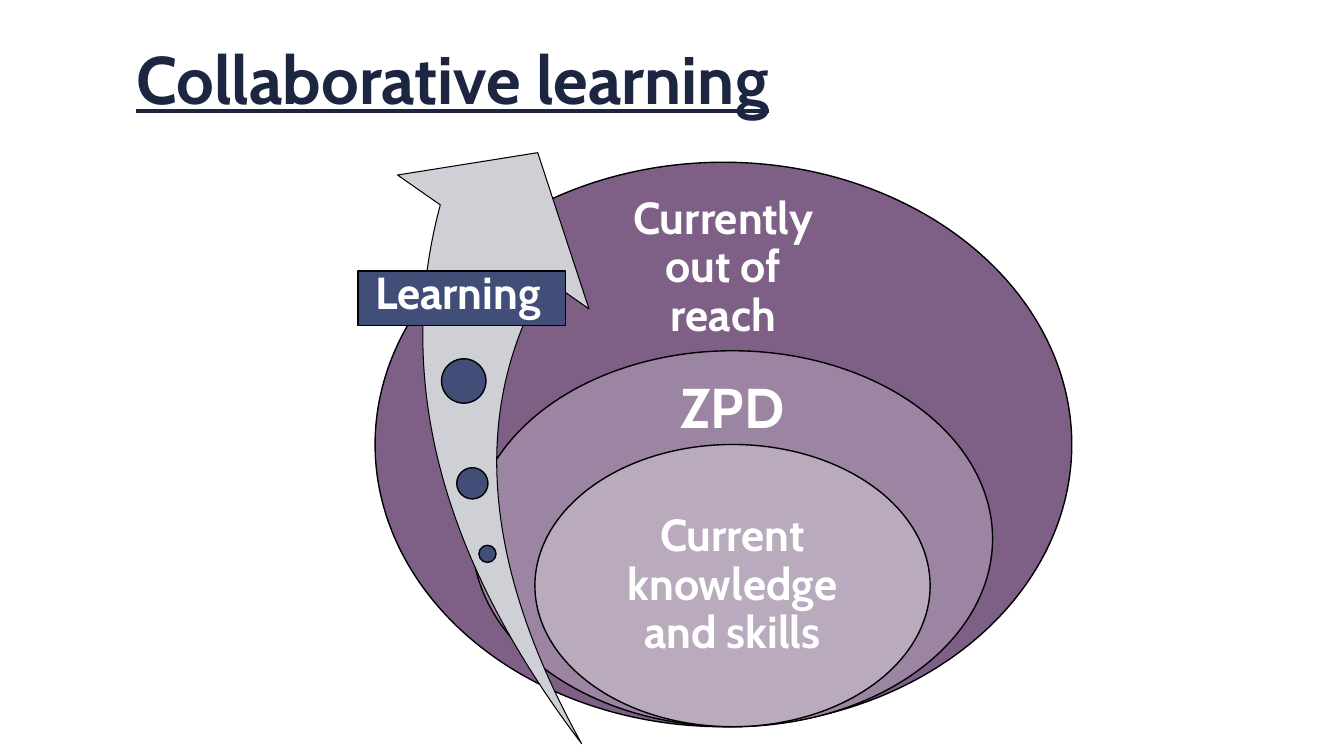
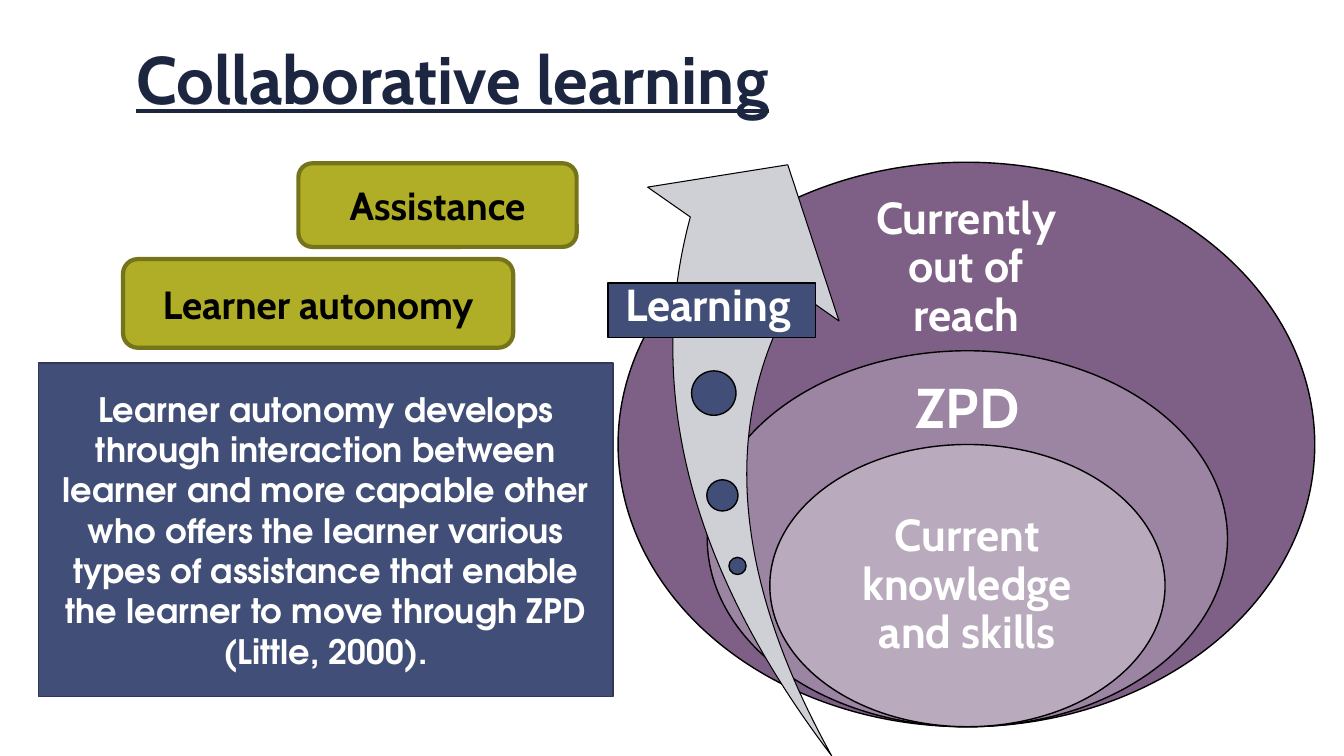
"""Build two slides on collaborative learning and the zone of proximal development."""
from pptx import Presentation
from pptx.dml.color import RGBColor
from pptx.enum import shapes, text
from pptx.util import Inches, Pt

NAVY = RGBColor(0x1C, 0x26, 0x40)
BLUE = RGBColor(0x41, 0x4E, 0x77)
BLUE_EDGE = RGBColor(0x30, 0x3A, 0x58)
PURPLE = RGBColor(0x7E, 0x60, 0x86)
MAUVE = RGBColor(0x9C, 0x84, 0xA3)
LILAC = RGBColor(0xB9, 0xAB, 0xBD)
GREY = RGBColor(0xCF, 0xD0, 0xD6)
OLIVE = RGBColor(0xB0, 0xAD, 0x26)
OLIVE_EDGE = RGBColor(0x75, 0x74, 0x1A)
BLACK = RGBColor(0, 0, 0)
WHITE = RGBColor(0xFF, 0xFF, 0xFF)

HEAD_FONT = "Cabin"
BODY_FONT = "TeX Gyre Adventor"
SHAPE = shapes.MSO_SHAPE
ANCHOR = text.MSO_ANCHOR
ALIGN = text.PP_ALIGN


def write(sp, words, size, color=WHITE, font=HEAD_FONT, align=ALIGN.CENTER,
          anchor=ANCHOR.MIDDLE, spacing=None, insets=(0.1, 0.05, 0.1, 0.05)):
    """Set one bold paragraph in a shape and return its run."""
    tf = sp.text_frame
    tf.text = words
    tf.word_wrap = True
    tf.auto_size = text.MSO_AUTO_SIZE.NONE
    tf.vertical_anchor = anchor
    tf.margin_left, tf.margin_top, tf.margin_right, tf.margin_bottom = map(Inches, insets)
    p = tf.paragraphs[0]
    p.alignment = align
    if spacing:
        p.line_spacing = spacing
    r = p.runs[0]
    r.font.name, r.font.size, r.font.bold = font, Pt(size), True
    r.font.color.rgb = color
    return r


def add_shape(s, kind, box, fill, line=BLACK, weight=1):
    """Add a filled, outlined preset shape without shadow."""
    sp = s.shapes.add_shape(kind, *map(Inches, box))
    sp.shadow.inherit = False
    sp.fill.solid()
    sp.fill.fore_color.rgb = fill
    sp.line.color.rgb = line
    sp.line.width = Pt(weight)
    return sp


def add_slide(prs):
    """Add a slide with the shared underlined title."""
    s = prs.slides.add_slide(prs.slide_layouts[5])
    sp = s.shapes.title
    sp.left, sp.top, sp.width, sp.height = map(Inches, (1.22, 0.08, 11.11, 1.16))
    r = write(sp, "Collaborative learning", 48, NAVY, align=ALIGN.LEFT,
              anchor=ANCHOR.BOTTOM, spacing=0.85, insets=(0.13, 0.07, 0.13, 0.07))
    r.font.underline = True
    return s


def add_zones(s, left, top, inner_shift):
    """Draw three nested zones that share a base, with their captions."""
    middle, base = left + 3.455, top + 5.6
    zones = [
        (6.91, 5.6, PURPLE, "Currently out of reach", 32, 2.42, 1.05, 0),
        (5.16, 3.73, MAUVE, "ZPD", 40, 2.4, 2.46, inner_shift),
        (3.92, 2.8, LILAC, "Current knowledge and skills", 32, 2.77, 4.2, inner_shift),
    ]
    for width, height, fill, words, size, text_width, text_middle, shift in zones:
        center = middle + shift
        add_shape(s, SHAPE.OVAL, (center - width / 2, base - height, width, height), fill)
        box = (center - text_width / 2, top + text_middle - 0.75, text_width, 1.5)
        sp = s.shapes.add_textbox(*map(Inches, box))
        write(sp, words, size, spacing=0.9, insets=(0.25, 0, 0.25, 0))


def add_learning_arrow(s, left, top):
    """Draw the rising arrow with its bubbles and label."""
    sp = add_shape(s, SHAPE.SWOOSH_ARROW, (left, top, 4.11, 5.1), GREY, weight=0.75)
    sp.adjustments[0] = sp.adjustments[1] = 0.25
    sp.rotation = 311.4
    for x, y, size in [(1.59, 3.81, 0.17), (1.37, 3.04, 0.31), (1.22, 1.96, 0.44)]:
        add_shape(s, SHAPE.OVAL, (left + x, top + y, size, size), BLUE)
    sp = add_shape(s, SHAPE.RECTANGLE, (left + 0.39, top + 1.09, 2.06, 0.54), BLUE)
    write(sp, "Learning", 32, align=ALIGN.LEFT, anchor=ANCHOR.TOP, spacing=0.9,
          insets=(0.17, 0, 0, 0))


def add_tag(s, box, words):
    """Add an olive rounded tag."""
    sp = add_shape(s, SHAPE.FLOWCHART_ALTERNATE_PROCESS, box, OLIVE, OLIVE_EDGE, 3)
    write(sp, words, 28, BLACK)


def add_statement(s, box, words):
    """Add the blue statement panel."""
    sp = add_shape(s, SHAPE.RECTANGLE, box, BLUE, BLUE_EDGE)
    write(sp, words, 24, font=BODY_FONT)


def main():
    """Build and save the presentation."""
    prs = Presentation()
    prs.slide_width, prs.slide_height = Inches(13.33), Inches(7.5)

    s = add_slide(prs)
    add_zones(s, 3.72, 1.61, 0.09)
    add_learning_arrow(s, 3.16, 1.6)

    s = add_slide(prs)
    add_zones(s, 6.13, 1.61, 0.01)
    add_tag(s, (2.96, 1.62, 2.76, 0.83), "Assistance")
    add_tag(s, (1.22, 2.57, 3.87, 0.88), "Learner autonomy")
    add_learning_arrow(s, 5.64, 1.72)
    add_statement(s, (0.38, 3.6, 5.7, 3.31),
                  "Learner autonomy develops through interaction between learner and "
                  "more capable other who offers the learner various types of assistance "
                  "that enable the learner to move through ZPD (Little, 2000).")

    prs.save("out.pptx")


if __name__ == "__main__":
    main()
